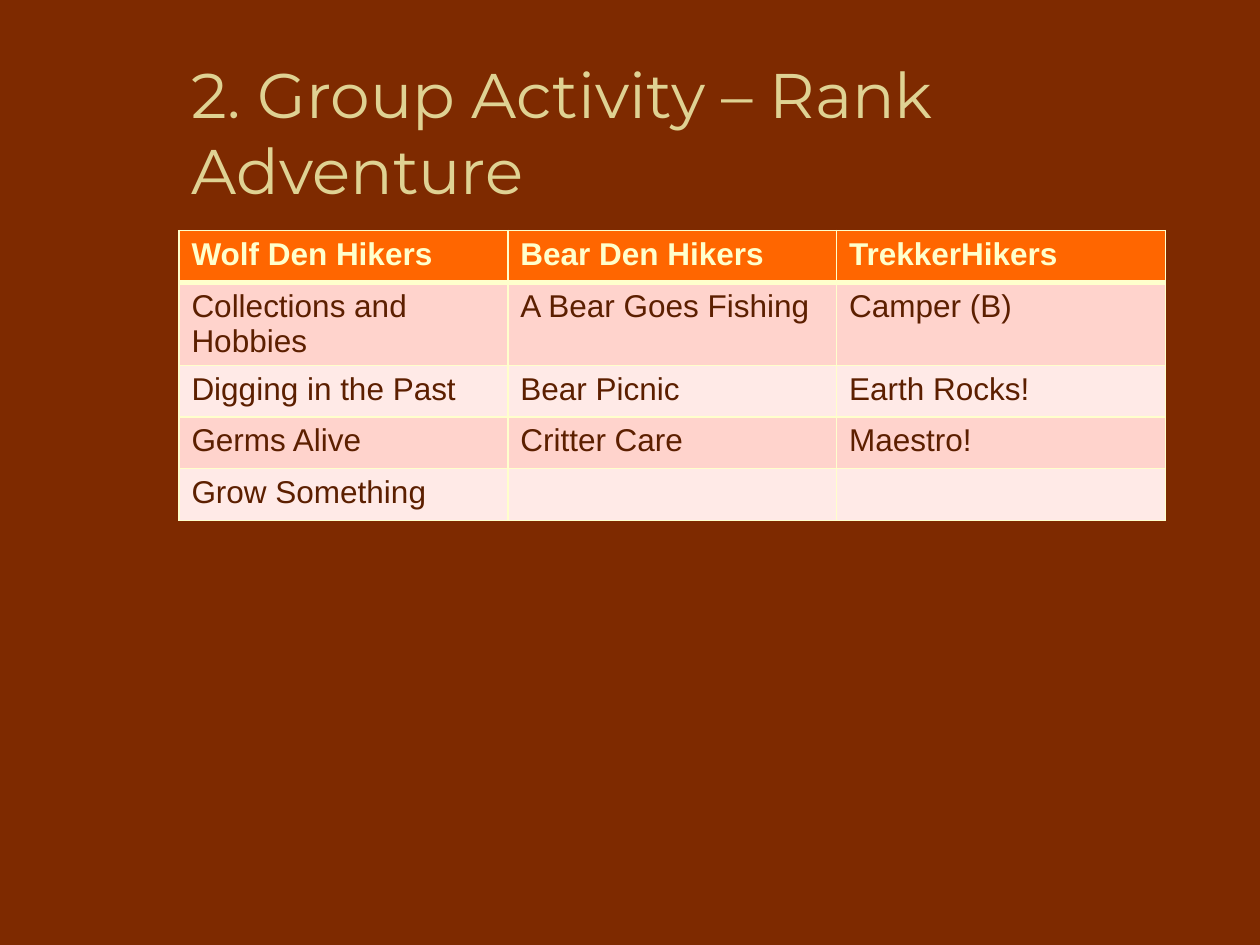
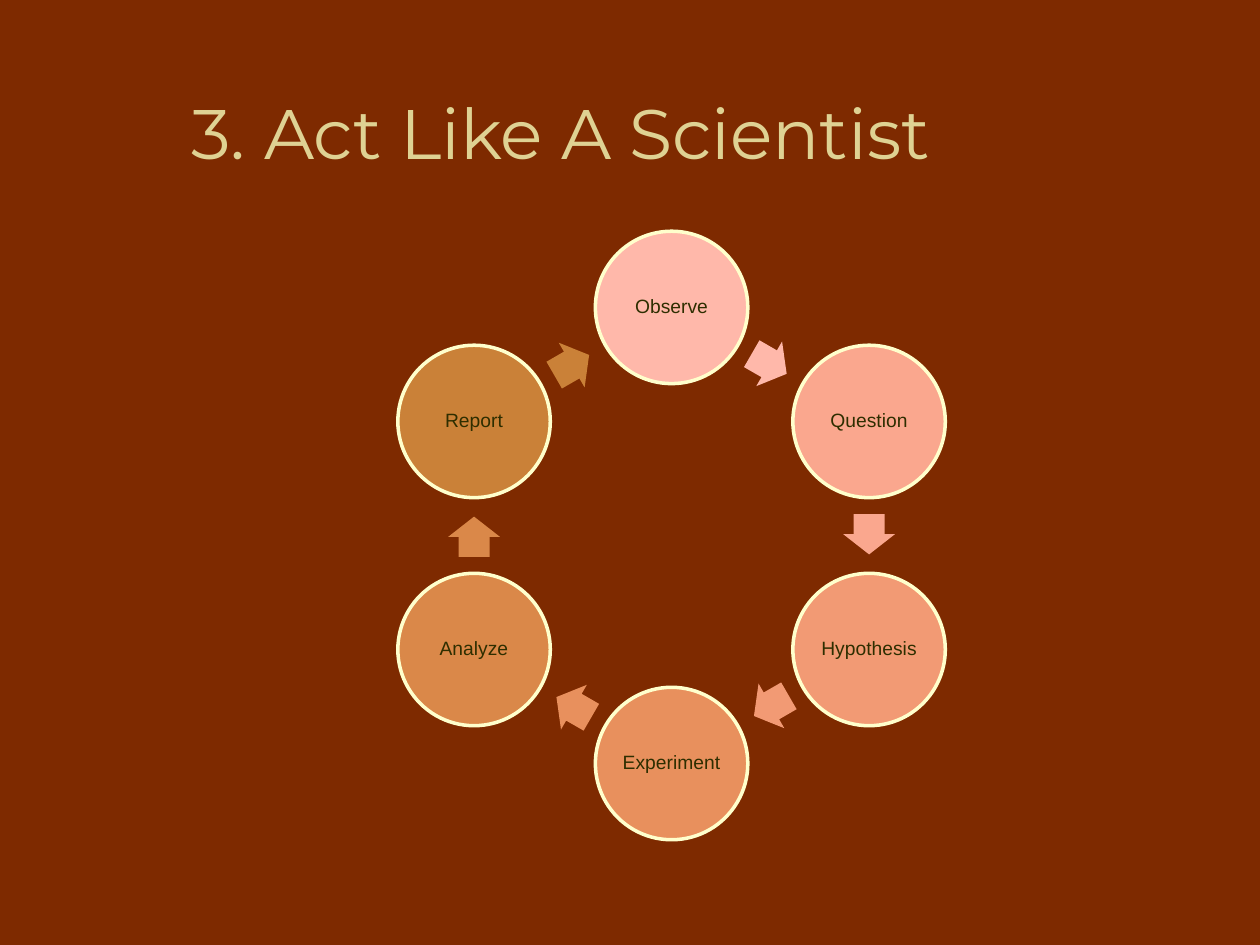
from math import cos, radians, sin

from lxml.etree import SubElement
from pptx import Presentation
from pptx.dml.color import RGBColor
from pptx.enum.shapes import MSO_SHAPE as Shape
from pptx.enum.text import MSO_ANCHOR as Anchor, MSO_AUTO_SIZE as AutoSize, PP_ALIGN as Align
from pptx.oxml.ns import qn
from pptx.util import Inches, Pt

BACKGROUND = RGBColor(0x7E, 0x2A, 0x00)
TITLE_COLOR = RGBColor(0xDF, 0xD2, 0x93)
CREAM = RGBColor(0xFF, 0xFF, 0xCC)
HEADER_FILL = RGBColor(0xFF, 0x66, 0x00)
BODY_TEXT = RGBColor(0x5C, 0x1F, 0x00)
BAND_FILLS = [RGBColor(0xFF, 0xD3, 0xCC), RGBColor(0xFF, 0xEA, 0xE7)]
STEP_TEXT = RGBColor(0x2E, 0x2E, 0x00)

ADVENTURES = [
    ("Wolf Den Hikers", "Bear Den Hikers", "TrekkerHikers"),
    ("Collections and Hobbies", "A Bear Goes Fishing", "Camper (B)"),
    ("Digging in the Past", "Bear Picnic", "Earth Rocks!"),
    ("Germs Alive", "Critter Care", "Maestro!"),
    ("Grow Something", "", ""),
]
STEPS = [
    ("Observe", RGBColor(0xFF, 0xB8, 0xAA)),
    ("Question", RGBColor(0xFA, 0xA7, 0x8E)),
    ("Hypothesis", RGBColor(0xF2, 0x9A, 0x74)),
    ("Experiment", RGBColor(0xE8, 0x90, 0x5D)),
    ("Analyze", RGBColor(0xDA, 0x88, 0x49)),
    ("Report", RGBColor(0xCA, 0x81, 0x38)),
]

LEFT, CONTENT_WIDTH = 1.42, 7.83
TABLE_TOP, ROW_HEIGHT = 1.83, 0.41
RING_X, RING_Y, RING_RADIUS = 5.33, 4.25, 1.81
CIRCLE_SIZE, ARROW_WIDTH, ARROW_HEIGHT = 1.21, 0.32, 0.41
ARROW_SETBACK = 0.01


def style_font(font, color, **values):
    font.color.rgb = color
    for name, value in values.items():
        setattr(font, name, value)


def add_titled_slide(deck, text, size):
    slide = deck.slides.add_slide(deck.slide_layouts[5])
    title = slide.shapes.title
    title.left, title.top = Inches(LEFT), Inches(0.5)
    title.width, title.height = Inches(CONTENT_WIDTH), Inches(1.08)
    frame = title.text_frame
    frame.text = text
    frame.auto_size = AutoSize.NONE
    frame.vertical_anchor = Anchor.MIDDLE
    para = frame.paragraphs[0]
    para.alignment = Align.LEFT
    style_font(para.runs[0].font, TITLE_COLOR, name="Montserrat", size=Pt(size))
    return slide


def set_borders(cell, **widths):
    """Draw cream borders; widths are points keyed by L, R, T and B."""
    properties = cell._tc.get_or_add_tcPr()
    for side, width in widths.items():
        line = SubElement(properties, qn(f"a:ln{side}"), w=str(Pt(width)))
        fill = SubElement(line, qn("a:solidFill"))
        SubElement(fill, qn("a:srgbClr"), val=str(CREAM))


def add_adventure_table(slide):
    rows, columns = len(ADVENTURES), len(ADVENTURES[0])
    table = slide.shapes.add_table(
        rows, columns, Inches(LEFT), Inches(TABLE_TOP),
        Inches(CONTENT_WIDTH), Inches(ROW_HEIGHT * rows)).table
    for row, names in enumerate(ADVENTURES):
        is_header = row == 0
        for column, name in enumerate(names):
            cell = table.cell(row, column)
            set_borders(cell, L=1, R=1, T=3 if row == 1 else 1, B=3 if is_header else 1)
            cell.fill.solid()
            cell.fill.fore_color.rgb = HEADER_FILL if is_header else BAND_FILLS[(row - 1) % 2]
            cell.text = name
            style_font(cell.text_frame.paragraphs[0].font,
                       CREAM if is_header else BODY_TEXT,
                       name="Arial", size=Pt(18), bold=is_header)


def add_centred_shape(slide, kind, x, y, width, height, fill):
    shape = slide.shapes.add_shape(kind, Inches(x - width / 2), Inches(y - height / 2),
                                   Inches(width), Inches(height))
    shape.shadow.inherit = False
    shape.fill.solid()
    shape.fill.fore_color.rgb = fill
    return shape


def add_step(slide, name, fill, angle):
    x = RING_X + RING_RADIUS * cos(angle)
    y = RING_Y + RING_RADIUS * sin(angle)
    circle = add_centred_shape(slide, Shape.OVAL, x, y, CIRCLE_SIZE, CIRCLE_SIZE, fill)
    circle.line.color.rgb = CREAM
    circle.line.width = Pt(2)
    frame = circle.text_frame
    frame.text = name
    frame.word_wrap = True
    frame.vertical_anchor = Anchor.MIDDLE
    for side in ("left", "top", "right", "bottom"):
        setattr(frame, f"margin_{side}", Inches(0.02))
    para = frame.paragraphs[0]
    para.alignment = Align.CENTER
    para.line_spacing = 0.9
    style_font(para.runs[0].font, STEP_TEXT, name="Arial", size=Pt(11))


def add_step_arrow(slide, fill, angle, half_step):
    """Point an arrow from the step at angle to the next, midway between them."""
    middle = angle + half_step
    heading = middle + radians(90)
    distance = RING_RADIUS * cos(half_step)
    x = RING_X + distance * cos(middle) - ARROW_SETBACK * cos(heading)
    y = RING_Y + distance * sin(middle) - ARROW_SETBACK * sin(heading)
    arrow = add_centred_shape(slide, Shape.RIGHT_ARROW, x, y, ARROW_WIDTH, ARROW_HEIGHT, fill)
    arrow.line.fill.background()
    arrow.adjustments[0], arrow.adjustments[1] = 0.6, 0.5
    arrow.rotation = round(heading / radians(1))


def add_science_cycle(slide):
    step_angle = radians(360 / len(STEPS))
    for index, (name, fill) in enumerate(STEPS):
        angle = index * step_angle - radians(90)
        add_step(slide, name, fill, angle)
        add_step_arrow(slide, fill, angle, step_angle / 2)


def main():
    deck = Presentation()
    deck.slide_width, deck.slide_height = Inches(10), Inches(7.5)
    background = deck.slide_master.background.fill
    background.solid()
    background.fore_color.rgb = BACKGROUND
    add_adventure_table(add_titled_slide(deck, "2. Group Activity – Rank Adventure", 36))
    add_science_cycle(add_titled_slide(deck, "3. Act Like A Scientist", 40))
    deck.save("out.pptx")


if __name__ == "__main__":
    main()
